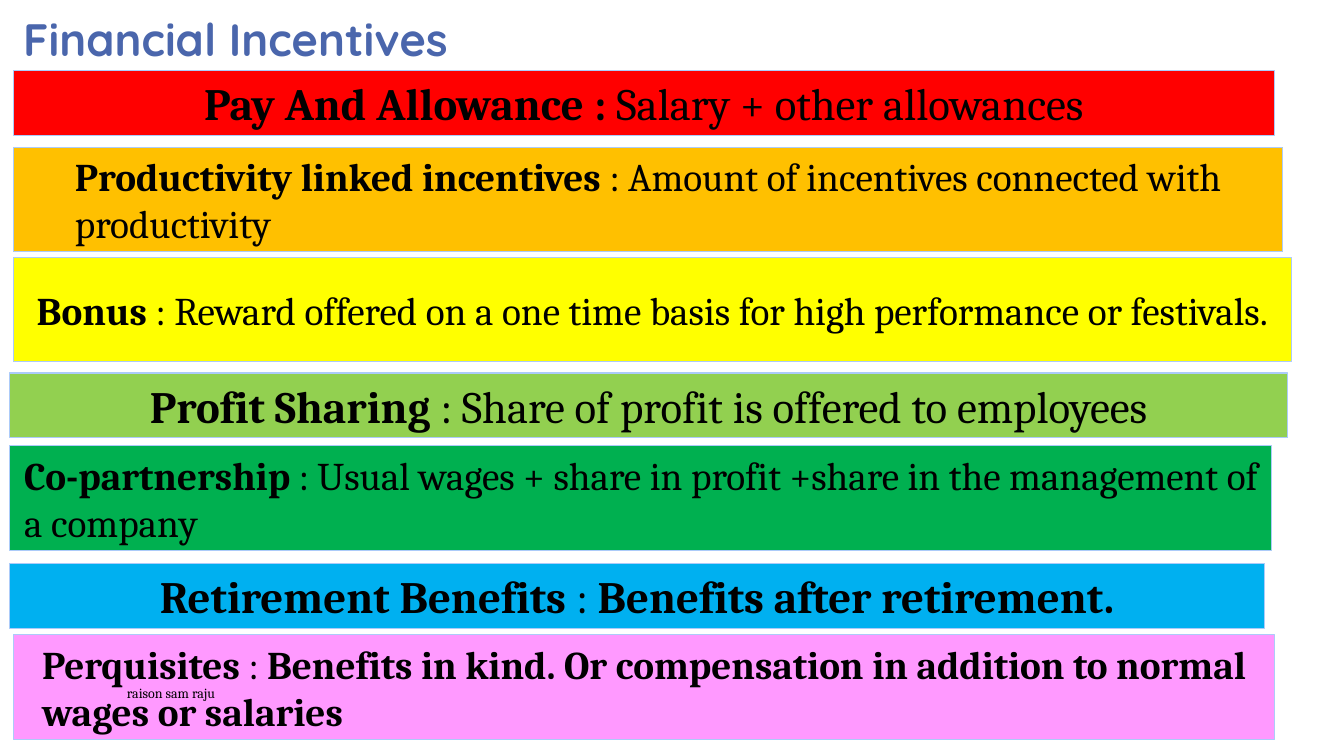
"""Build the Financial Incentives slide with its seven coloured bars."""
from dataclasses import dataclass

import pptx
import pptx.dml.color
import pptx.enum.shapes
import pptx.enum.text
import pptx.util
from pptx.util import Cm

BODY_FONT = "Cambria"
BAR_HEIGHTS = {32: 1.63, 28: 2.64}


@dataclass
class Bar:
    fill: str
    left: float
    top: float
    width: float
    size: int
    runs: tuple[str, ...]


BARS = [
    Bar("FF0000", 0.33, 1.78, 31.8, 32,
        ("Pay And Allowance : ", "Salary + other allowances")),
    Bar("FFC000", 0.33, 3.71, 32, 28,
        ("Productivity linked incentives ",
         ": Amount of incentives connected with productivity")),
    Bar("FFFF00", 0.33, 6.48, 32.21, 28,
        ("Bonus ", ": Reward offered on a one time basis for high performance or festivals.")),
    Bar("92D050", 0.25, 9.4, 32.21, 32,
        ("Profit Sharing ", ": Share of profit is offered to employees")),
    Bar("00B050", 0.25, 11.23, 31.8, 28,
        ("Co-partnership ",
         ": Usual wages + share in profit +share in the management of a company")),
    Bar("00B0F0", 0.25, 14.2, 31.62, 32,
        ("Retirement Benefits ", ": ", "Benefits after retirement.")),
    Bar("FF99FF", 0.33, 16, 31.8, 28,
        ("Perquisites ", ": ",
         "Benefits in kind. Or compensation in addition to normal wages or salaries")),
]


def rgb(value: str) -> pptx.dml.color.RGBColor:
    return pptx.dml.color.RGBColor.from_string(value)


def set_font(p, name: str, size: float, color: str) -> None:
    p.alignment = pptx.enum.text.PP_ALIGN.LEFT
    p.font.name = name
    p.font.size = pptx.util.Pt(size)
    p.font.color.rgb = rgb(color)


def add_title(s, text: str) -> None:
    sp = s.shapes.title
    sp.left, sp.top, sp.width, sp.height = Cm(0.33), Cm(0.33), Cm(23.6), Cm(1.45)
    tf = sp.text_frame
    tf.text = text
    tf.vertical_anchor = pptx.enum.text.MSO_ANCHOR.BOTTOM
    p = tf.paragraphs[0]
    p.line_spacing = 0.8
    set_font(p, "Quicksand", 32.4, "4A66AC")
    p.font.bold = True


def add_bar(s, bar: Bar) -> None:
    sp = s.shapes.add_shape(
        pptx.enum.shapes.MSO_SHAPE.RECTANGLE,
        Cm(bar.left), Cm(bar.top), Cm(bar.width), Cm(BAR_HEIGHTS[bar.size]))
    sp.shadow.inherit = False
    sp.fill.solid()
    sp.fill.fore_color.rgb = rgb(bar.fill)
    sp.line.color.rgb = rgb("ACCBF9")
    sp.line.width = pptx.util.Pt(0.75)
    tf = sp.text_frame
    tf.word_wrap = True
    tf.auto_size = pptx.enum.text.MSO_AUTO_SIZE.SHAPE_TO_FIT_TEXT
    tf.vertical_anchor = pptx.enum.text.MSO_ANCHOR.MIDDLE
    sp.element.txBody.bodyPr.set("anchorCtr", "1")
    p = tf.paragraphs[0]
    set_font(p, BODY_FONT, bar.size, "000000")
    for i, text in enumerate(bar.runs):
        r = p.add_run()
        r.text = text
        r.font.bold = i % 2 == 0


def add_author(s, text: str) -> None:
    sp = s.shapes.add_textbox(Cm(2.95), Cm(17.09), Cm(15.7), Cm(0.76))
    tf = sp.text_frame
    tf.word_wrap = True
    tf.vertical_anchor = pptx.enum.text.MSO_ANCHOR.MIDDLE
    tf.text = text
    set_font(tf.paragraphs[0], BODY_FONT, 10, "000000")


def main() -> None:
    prs = pptx.Presentation()
    prs.slide_width, prs.slide_height = Cm(33.87), Cm(19.05)
    s = prs.slides.add_slide(prs.slide_layouts[5])
    add_title(s, "Financial Incentives")
    for bar in BARS:
        add_bar(s, bar)
    add_author(s, "raison sam raju")
    prs.save("out.pptx")


if __name__ == "__main__":
    main()
